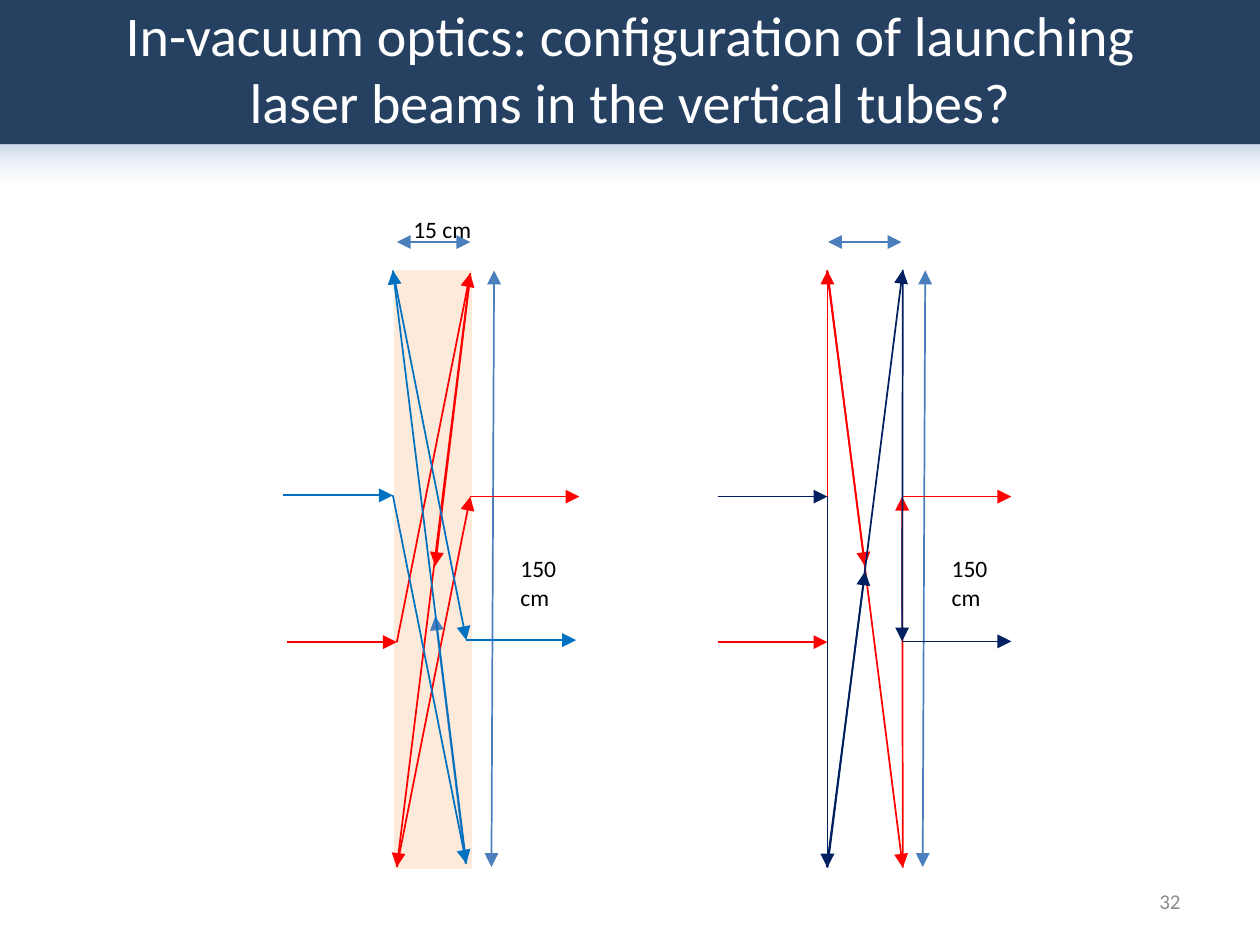
from itertools import pairwise

from lxml import etree
from pptx import Presentation
from pptx.dml.color import RGBColor
from pptx.enum.shapes import MSO_CONNECTOR, MSO_SHAPE
from pptx.enum.text import MSO_ANCHOR, MSO_AUTO_SIZE, PP_ALIGN
from pptx.oxml.ns import qn
from pptx.util import Cm, Pt

STRAIGHT, RECTANGLE = MSO_CONNECTOR.STRAIGHT, MSO_SHAPE.RECTANGLE
LEFT, CENTER, RIGHT = PP_ALIGN.LEFT, PP_ALIGN.CENTER, PP_ALIGN.RIGHT
TOP, MIDDLE = MSO_ANCHOR.TOP, MSO_ANCHOR.MIDDLE

WHITE = RGBColor(0xFF, 0xFF, 0xFF)
BLACK = RGBColor(0x00, 0x00, 0x00)
GREY = RGBColor(0x8C, 0x8C, 0x8C)
HEADER = RGBColor(0x25, 0x40, 0x61)
GLOW_TOP = RGBColor(0x95, 0xB3, 0xD7)
GLOW_BOTTOM = RGBColor(0xE1, 0xE8, 0xF5)
TUBE = RGBColor(0xFD, 0xEA, 0xDA)
RED = RGBColor(0xFF, 0x00, 0x00)
BLUE = RGBColor(0x00, 0x70, 0xC0)
NAVY = RGBColor(0x00, 0x20, 0x60)
STEEL = RGBColor(0x4B, 0x7E, 0xBC)

FONT = "Calibri"
SLIDE_WIDTH, SLIDE_HEIGHT = 19.05, 14.29
HEADER_HEIGHT, GLOW_HEIGHT = 2.18, 0.61

TITLE = "In-vacuum optics: configuration of launching laser beams in the vertical tubes?"
PAGE_NUMBER = "32"

# Every beam runs through its points, with an arrowhead at each bounce (cm).
BEAMS = [
    (RED, [(7.11, 4.17), (6.58, 8.56)]),
    (RED, [(4.34, 9.71), (6, 9.71), (7.11, 4.13), (6, 13.11), (7.11, 7.51), (8.76, 7.51)]),
    (STEEL, [(7.04, 13.06), (6.58, 9.32)]),
    (BLUE, [(4.28, 7.49), (5.94, 7.49), (7.05, 13.06), (5.94, 4.09), (7.05, 9.68), (8.71, 9.68)]),
    (RED, [(12.5, 4.09), (13.08, 8.56)]),
    (RED, [(10.85, 9.71), (12.51, 9.71), (12.51, 4.09), (13.65, 13.12), (13.64, 7.51), (15.29, 7.51)]),
    (NAVY, [(12.5, 13.11), (13.08, 8.64)]),
    (NAVY, [(10.85, 7.51), (12.51, 7.51), (12.51, 13.12), (13.65, 4.08), (13.64, 9.7), (15.29, 9.7)]),
]
TUBE_BOX = (6, 4.12, 1.11, 8.99)
DIMENSIONS = [((6, 3.66), (7.11, 3.66)), ((7.47, 4.09), (7.43, 13.11))]
TUBE_OFFSETS = [0, 6.52]
WIDTH_LABEL = ("15 cm", (6, 3.12, 1.42, 0.69))
HEIGHT_LABEL = ("150 cm", (7.62, 8.26, 1.42, 1.12))


def add_box(slide, box, color):
    shape = slide.shapes.add_shape(RECTANGLE, *map(Cm, box))
    shape.shadow.inherit = False
    shape.fill.solid()
    shape.fill.fore_color.rgb = color
    shape.line.fill.background()
    return shape


def add_glow(slide, box):
    """Add a band below the header that fades out downwards."""
    glow = add_box(slide, box, GLOW_TOP)
    glow.fill.gradient()
    glow.fill.gradient_angle = 270
    stops = glow.fill.gradient_stops
    for stop, color, position in zip(stops, (GLOW_TOP, GLOW_BOTTOM), (0, 1)):
        stop.color.rgb = color
        stop.position = position
    for color, alpha in zip(glow.element.iter(qn("a:srgbClr")), ("50000", "0")):
        etree.SubElement(color, qn("a:alpha"), val=alpha)


def add_arrow(slide, start, end, color, ends=("tailEnd",)):
    points = [Cm(value) for value in (*start, *end)]
    arrow = slide.shapes.add_connector(STRAIGHT, *points)
    arrow.line.color.rgb = color
    arrow.line.width = Pt(0.75)
    line = arrow.line._get_or_add_ln()
    for name in ends:
        etree.SubElement(line, qn(f"a:{name}"), type="triangle")
    etree.SubElement(arrow.element.spPr, qn("a:effectLst"))


def write_text(shape, text, size, color, align, anchor):
    frame = shape.text_frame
    frame.text = text
    frame.word_wrap = True
    frame.auto_size = MSO_AUTO_SIZE.NONE
    frame.vertical_anchor = anchor
    paragraph = frame.paragraphs[0]
    paragraph.alignment = align
    font = paragraph.runs[0].font
    font.name, font.size = FONT, Pt(size)
    font.color.rgb = color


def add_label(slide, text, box, size=10.1, color=BLACK, align=LEFT, anchor=TOP):
    label = slide.shapes.add_textbox(*map(Cm, box))
    write_text(label, text, size, color, align, anchor)


def main():
    prs = Presentation()
    prs.slide_width, prs.slide_height = Cm(SLIDE_WIDTH), Cm(SLIDE_HEIGHT)
    slide = prs.slides.add_slide(prs.slide_layouts[5])

    add_glow(slide, (0, HEADER_HEIGHT, SLIDE_WIDTH, GLOW_HEIGHT))
    add_box(slide, (0, 0, SLIDE_WIDTH, HEADER_HEIGHT), HEADER)

    title = slide.shapes.title
    title.left, title.top, title.width, title.height = map(Cm, (0.95, -0.18, 17.15, 2.4))
    write_text(title, TITLE, 24, WHITE, CENTER, MIDDLE)
    title.element.getparent().append(title.element)  # in front of the header
    add_label(slide, PAGE_NUMBER, (13.65, 13.24, 4.45, 0.76), 9, GREY, RIGHT, MIDDLE)

    tube = add_box(slide, TUBE_BOX, TUBE)
    tube.line.color.rgb = TUBE
    tube.line.width = Pt(2)

    add_label(slide, *WIDTH_LABEL)
    height_text, (left, *rest) = HEIGHT_LABEL
    for offset in TUBE_OFFSETS:
        for (x1, y1), (x2, y2) in DIMENSIONS:
            add_arrow(slide, (x1 + offset, y1), (x2 + offset, y2), STEEL, ("headEnd", "tailEnd"))
        add_label(slide, height_text, (left + offset, *rest))

    for color, points in BEAMS:
        for start, end in pairwise(points):
            add_arrow(slide, start, end, color)

    prs.save("out.pptx")


if __name__ == "__main__":
    main()
